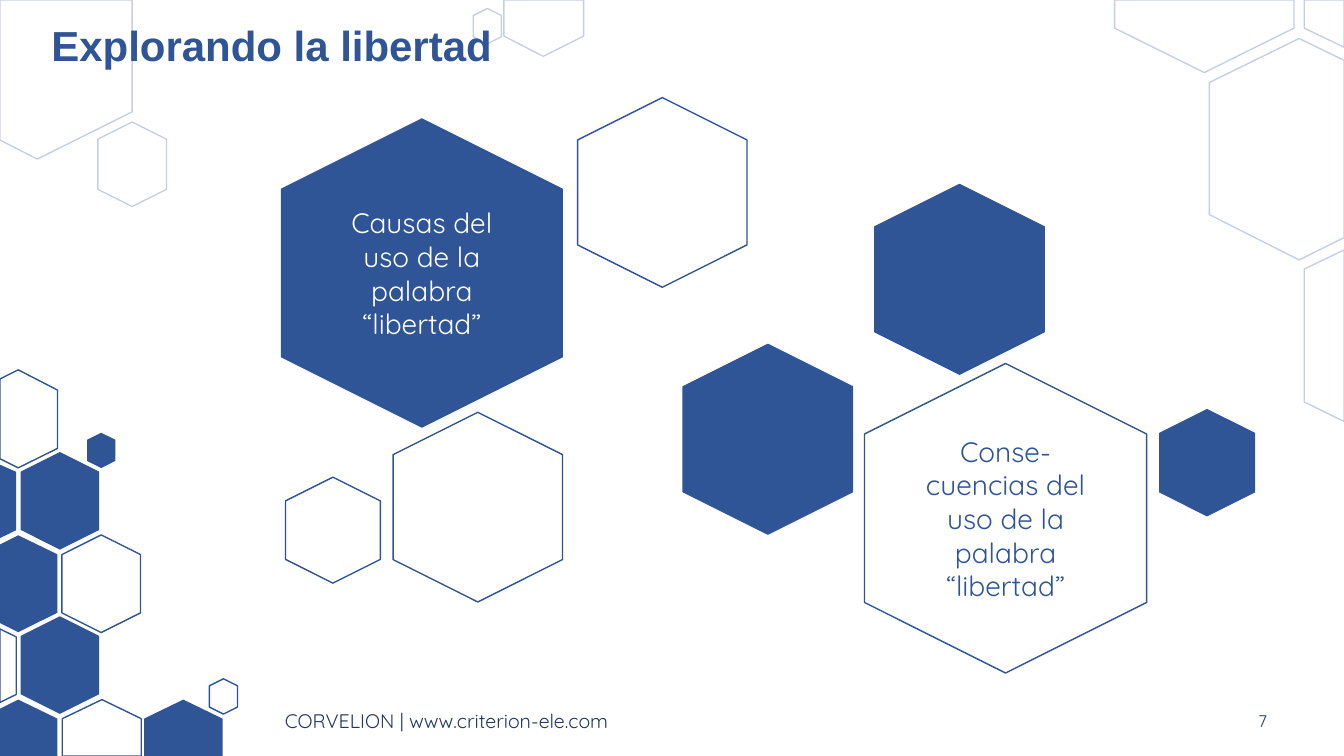
from lxml import etree
from pptx import Presentation
from pptx.dml.color import RGBColor
from pptx.enum.shapes import MSO_SHAPE
from pptx.enum.text import MSO_ANCHOR, MSO_AUTO_SIZE, PP_ALIGN
from pptx.oxml.ns import qn
from pptx.util import Cm, Pt

BLUE = RGBColor(0x2F, 0x55, 0x97)
NAVY = RGBColor(0x20, 0x38, 0x64)
WHITE = RGBColor(0xFF, 0xFF, 0xFF)
HEXAGON = MSO_SHAPE.HEXAGON
MIDDLE = MSO_ANCHOR.MIDDLE
NO_AUTOFIT = MSO_AUTO_SIZE.NONE
LEFT, CENTER, RIGHT = PP_ALIGN.LEFT, PP_ALIGN.CENTER, PP_ALIGN.RIGHT
FONT = "Quicksand"
SLIDE_WIDTH, SLIDE_HEIGHT = 33.87, 19.05

deck = Presentation()
deck.slide_width = Cm(SLIDE_WIDTH)
deck.slide_height = Cm(SLIDE_HEIGHT)
page = deck.slides.add_slide(deck.slide_layouts[5])


def paint(shape, fill, outlined, faint=False):
    shape.shadow.inherit = False
    if fill is None:
        shape.fill.background()
    else:
        shape.fill.solid()
        shape.fill.fore_color.rgb = fill
    if not outlined:
        shape.line.fill.background()
        return
    shape.line.color.rgb = BLUE
    shape.line.width = Pt(1)
    if faint:
        color = shape.line._ln.find(".//" + qn("a:srgbClr"))
        etree.SubElement(color, qn("a:alpha")).set("val", "28000")


def write(shape, text, size, color, align, font=FONT):
    frame = shape.text_frame
    frame.word_wrap = True
    frame.auto_size = NO_AUTOFIT
    frame.vertical_anchor = MIDDLE
    para = frame.paragraphs[0]
    para.alignment = align
    span = para.add_run()
    span.text = text
    span.font.size = Pt(size)
    span.font.name = font
    span.font.color.rgb = color


right, bottom = SLIDE_WIDTH, SLIDE_HEIGHT
cut_hexagons = [
    (WHITE, True, True, [(12.7, 0), (14.71, 0), (14.71, 0.91), (13.69, 1.42), (12.7, 0.91)]),
    (WHITE, True, True, [(28.09, 0), (32.61, 0), (32.61, 0.71), (30.35, 1.83), (28.09, 0.71)]),
    (WHITE, True, True, [(32.87, 0), (right, 0), (right, 1.19), (32.87, 0.71)]),
    (WHITE, True, True, [(32.74, 0.97), (right, 1.52), (right, 5.99), (32.74, 6.55),
                         (30.48, 5.41), (30.48, 2.08)]),
    (WHITE, True, True, [(right, 6.3), (right, 10.62), (32.87, 10.13), (32.87, 6.78)]),
    (WHITE, True, True, [(0, 0), (3.33, 0), (3.33, 2.82), (0.94, 4.01), (0, 3.53)]),
    (WHITE, True, False, [(0.46, 9.32), (1.45, 9.83), (1.45, 11.3), (0.46, 11.79),
                          (0, 11.56), (0, 9.55)]),
    (BLUE, False, False, [(0, 11.71), (0.41, 11.89), (0.41, 13.36), (0, 13.56)]),
    (BLUE, False, False, [(0.46, 13.49), (1.45, 13.97), (1.45, 15.44), (0.46, 15.93),
                          (0, 15.7), (0, 13.72)]),
    (WHITE, True, False, [(0, 15.85), (0.41, 16.05), (0.41, 17.5), (0, 17.7)]),
    (BLUE, False, False, [(0.46, 17.63), (1.45, 18.11), (1.45, bottom), (0, bottom), (0, 17.86)]),
    (WHITE, True, False, [(2.57, 17.63), (3.56, 18.11), (3.56, bottom), (1.57, bottom),
                          (1.57, 18.11)]),
    (BLUE, False, False, [(4.62, 17.63), (5.61, 18.11), (5.61, bottom), (3.63, bottom),
                          (3.63, 18.11)]),
]
for fill, outlined, faint, corners in cut_hexagons:
    points = [(round(x * 100), round(y * 100)) for x, y in corners]
    builder = page.shapes.build_freeform(*points[0], scale=Cm(0.01))
    builder.add_line_segments(points[1:], close=True)
    paint(builder.convert_to_shape(), fill, outlined, faint)

TINY, CELL, PALE = (0.71, 0.89), (1.98, 2.46), (1.73, 2.13)
SMALL, MEDIUM, LARGE = (2.39, 2.67), (4.27, 4.78), (7.11, 7.8)
hexagons = [
    (12.28, 0.66, TINY, WHITE, True, True, ""),
    (3.33, 4.14, PALE, WHITE, True, True, ""),
    (1.51, 12.62, CELL, BLUE, False, False, ""),
    (2.55, 14.71, CELL, WHITE, True, False, ""),
    (1.51, 16.76, CELL, BLUE, False, False, ""),
    (5.63, 17.55, TINY, WHITE, True, False, ""),
    (2.55, 11.35, TINY, BLUE, False, False, ""),
    (25.34, 13.06, LARGE, None, True, False, "Conse-cuencias del uso de la palabra “libertad”"),
    (10.63, 6.88, LARGE, BLUE, False, False, "Causas del uso de la palabra “libertad”"),
    (16.69, 4.85, MEDIUM, None, True, False, ""),
    (12.04, 12.78, MEDIUM, None, True, False, ""),
    (24.18, 7.04, MEDIUM, BLUE, True, False, ""),
    (19.35, 11.07, MEDIUM, BLUE, True, False, ""),
    (8.39, 13.36, SMALL, None, True, False, ""),
    (30.42, 11.66, SMALL, BLUE, True, False, ""),
]
for x, y, (width, height), fill, outlined, faint, text in hexagons:
    hexagon = page.shapes.add_shape(
        HEXAGON, Cm(x - height / 2), Cm(y - width / 2), Cm(height), Cm(width))
    hexagon.rotation = 90
    paint(hexagon, fill, outlined, faint)
    if text:
        write(hexagon, text, 20, WHITE if fill else BLUE, CENTER)
        hexagon.text_frame._txBody.bodyPr.set("vert", "vert270")

title = page.shapes.title
title.left, title.top, title.width, title.height = Cm(1.04), Cm(0.46), Cm(29.36), Cm(1.52)
write(title, "Explorando la libertad", 30, BLUE, LEFT, "Arial")
title_para = title.text_frame.paragraphs[0]
title_para.line_spacing = 0.9
title_para.runs[0].font.bold = True
page.shapes._spTree.append(title._element)

for left, width, text, size, align in [
    (6.93, 16.59, "CORVELION | www.criterion-ele.com", 14, LEFT),
    (29.67, 2.51, "7", 12, RIGHT),
]:
    box = page.shapes.add_textbox(Cm(left), Cm(17.65), Cm(width), Cm(1.02))
    write(box, text, size, NAVY, align)

deck.save("out.pptx")
